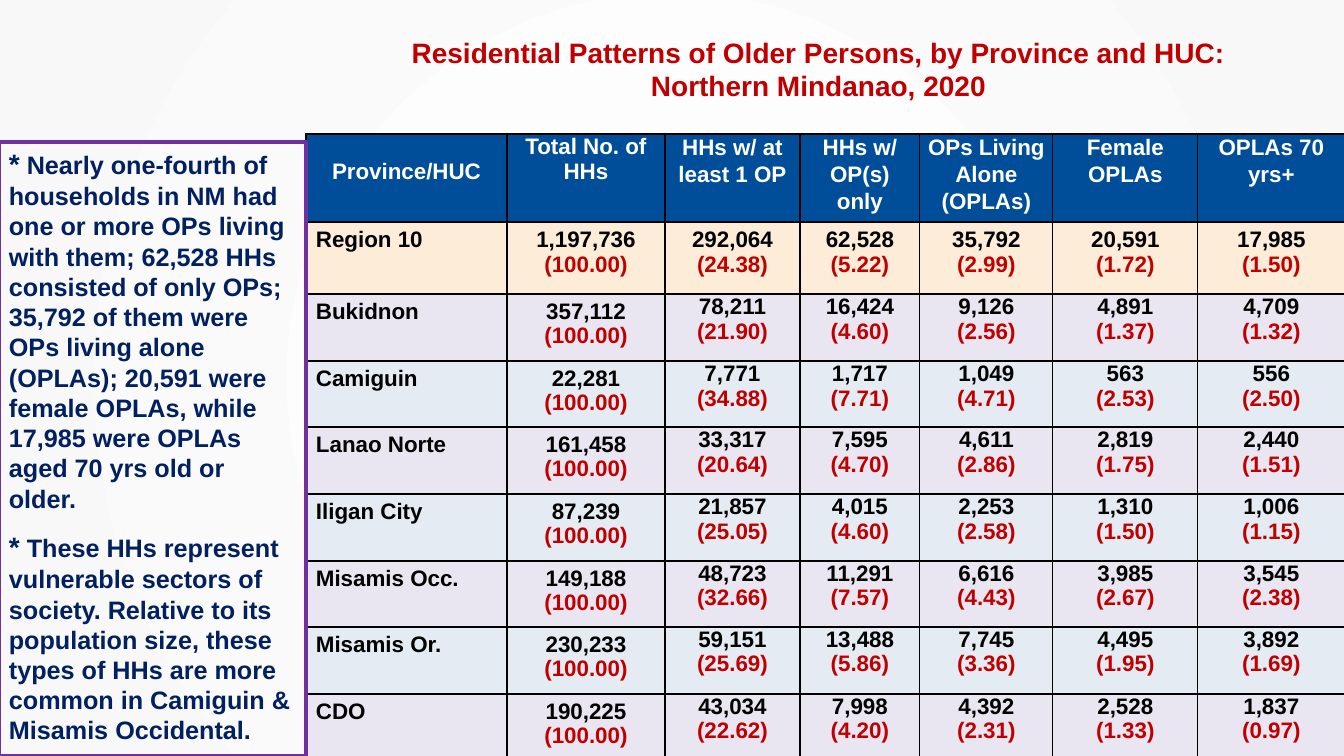
from lxml import etree
from pptx import Presentation
from pptx import util as u
from pptx.dml.color import RGBColor
from pptx.enum import shapes, text
from pptx.oxml import parse_xml
from pptx.oxml.ns import nsdecls, qn

SCALE = 914400 / 100.8
RED, NAVY, BLACK, WHITE = "C00000", "002060", "000000", "FFFFFF"
CENTER = text.PP_ALIGN.CENTER


def px(n):
    return u.Emu(round(n * SCALE))


def add_run(para, words, size, color):
    run = para.add_run()
    run.text = words
    font = run.font
    font.name, font.size, font.bold = "Arial", u.Pt(size), True
    font.color.rgb = RGBColor.from_string(color)


prs = Presentation()
prs.slide_width, prs.slide_height = px(1344), px(756)
slide = prs.slides.add_slide(prs.slide_layouts[5])

# Background: soft radial gradient
back = slide.background.fill
back.gradient()
for stop, color in zip(back.gradient_stops, (WHITE, "F8F8F8")):
    stop.color.rgb = RGBColor.from_string(color)
grad = slide.element.find(".//" + qn("a:gradFill"))
grad.remove(grad.find(qn("a:lin")))
grad.append(parse_xml(
    f'<a:path {nsdecls("a")} path="circle">'
    '<a:fillToRect l="50000" t="50000" r="50000" b="50000"/></a:path>'))

# Title
title = slide.shapes.title
title.left, title.top, title.width, title.height = px(396), px(30), px(845), px(78)
frame = title.text_frame
frame.word_wrap = True
frame.auto_size = text.MSO_AUTO_SIZE.NONE
frame.vertical_anchor = text.MSO_ANCHOR.TOP
frame.paragraphs[0].alignment = CENTER
add_run(frame.paragraphs[0], "Residential Patterns of Older Persons, by Province "
        "and HUC: Northern Mindanao, 2020", 20, RED)

# Table data: place, total, then count and percent for each column
heads = ["Province/HUC", "Total No. of HHs", "HHs w/ at least 1 OP", "HHs w/ OP(s) only",
         "OPs Living Alone (OPLAs)", "Female OPLAs", "OPLAs 70 yrs+"]
places = [
    ("Region 10", "1,197,736", "292,064 24.38", "62,528 5.22", "35,792 2.99",
     "20,591 1.72", "17,985 1.50"),
    ("Bukidnon", "357,112", "78,211 21.90", "16,424 4.60", "9,126 2.56",
     "4,891 1.37", "4,709 1.32"),
    ("Camiguin", "22,281", "7,771 34.88", "1,717 7.71", "1,049 4.71",
     "563 2.53", "556 2.50"),
    ("Lanao Norte", "161,458", "33,317 20.64", "7,595 4.70", "4,611 2.86",
     "2,819 1.75", "2,440 1.51"),
    ("Iligan City", "87,239", "21,857 25.05", "4,015 4.60", "2,253 2.58",
     "1,310 1.50", "1,006 1.15"),
    ("Misamis Occ.", "149,188", "48,723 32.66", "11,291 7.57", "6,616 4.43",
     "3,985 2.67", "3,545 2.38"),
    ("Misamis Or.", "230,233", "59,151 25.69", "13,488 5.86", "7,745 3.36",
     "4,495 1.95", "3,892 1.69"),
    ("CDO", "190,225", "43,034 22.62", "7,998 4.20", "4,392 2.31",
     "2,528 1.33", "1,837 0.97"),
]
widths = [201, 158, 135, 120, 133, 145, 147]
heights = [88, 72] + [67, 66, 67] * 2 + [67]
fills = ["004E9A", "FCECD8"] + ["EAE6F1", "E4EBF2"] * 3 + ["EAE6F1"]

# Table
table = slide.shapes.add_table(len(heights), len(widths), px(306), px(134),
                               px(sum(widths)), px(sum(heights))).table
table.first_row = table.horz_banding = False
for col, width in zip(table.columns, widths):
    col.width = px(width)
for row, height in zip(table.rows, heights):
    row.height = px(height)

for r, items in enumerate([heads] + places):
    for c, item in enumerate(items):
        cell = table.cell(r, c)
        tight = r == 0 or (r > 1 and c > 1)
        cell.margin_left = cell.margin_right = px(7 if tight else 10)
        cell.margin_top = cell.margin_bottom = px(0 if tight else 5)

        # Borders, then fill
        props = cell._tc.get_or_add_tcPr()
        for side in ("lnL", "lnR", "lnT", "lnB"):
            line = etree.SubElement(props, qn("a:" + side), w="12700")
            solid = etree.SubElement(line, qn("a:solidFill"))
            etree.SubElement(solid, qn("a:srgbClr"), val=BLACK)
        cell.fill.solid()
        cell.fill.fore_color.rgb = RGBColor.from_string(fills[r])

        # Words
        para = cell.text_frame.paragraphs[0]
        if r == 0 or c > 0:
            para.alignment = CENTER
        if r == 0:
            para.line_spacing = 2.0 if c == 0 else 1.0 if c == 1 else 1.07
            add_run(para, item, 16, WHITE)
        elif c == 0:
            add_run(para, item, 16, BLACK)
        else:
            count, share = (item, "100.00") if c == 1 else item.split()
            add_run(para, count, 16, BLACK)
            para = cell.text_frame.add_paragraph()
            para.alignment = CENTER
            add_run(para, f"({share})", 16, RED)

# Side notes
notes = [
    " Nearly one-fourth of households in NM had one or more OPs living with them; "
    "62,528 HHs consisted of only OPs; 35,792 of them were OPs living alone (OPLAs); "
    "20,591 were female OPLAs, while 17,985 were OPLAs aged 70 yrs old or older.",
    " These HHs represent vulnerable sectors of society. Relative to its population "
    "size, these types of HHs are more common in Camiguin & Misamis Occidental.",
]
box = slide.shapes.add_shape(shapes.MSO_SHAPE.RECTANGLE, px(-1), px(142), px(307), px(614))
box.shadow.inherit = False
box.fill.background()
box.line.color.rgb = RGBColor.from_string("7030A0")
box.line.width = u.Pt(3)
frame = box.text_frame
frame.word_wrap = True
frame.vertical_anchor = text.MSO_ANCHOR.TOP
for i, note in enumerate(notes):
    para = frame.add_paragraph() if i else frame.paragraphs[0]
    para.alignment = text.PP_ALIGN.LEFT
    if i:
        para.space_before = u.Pt(12)
    add_run(para, "*", 20, NAVY)
    add_run(para, note, 18, NAVY)

prs.save("out.pptx")
